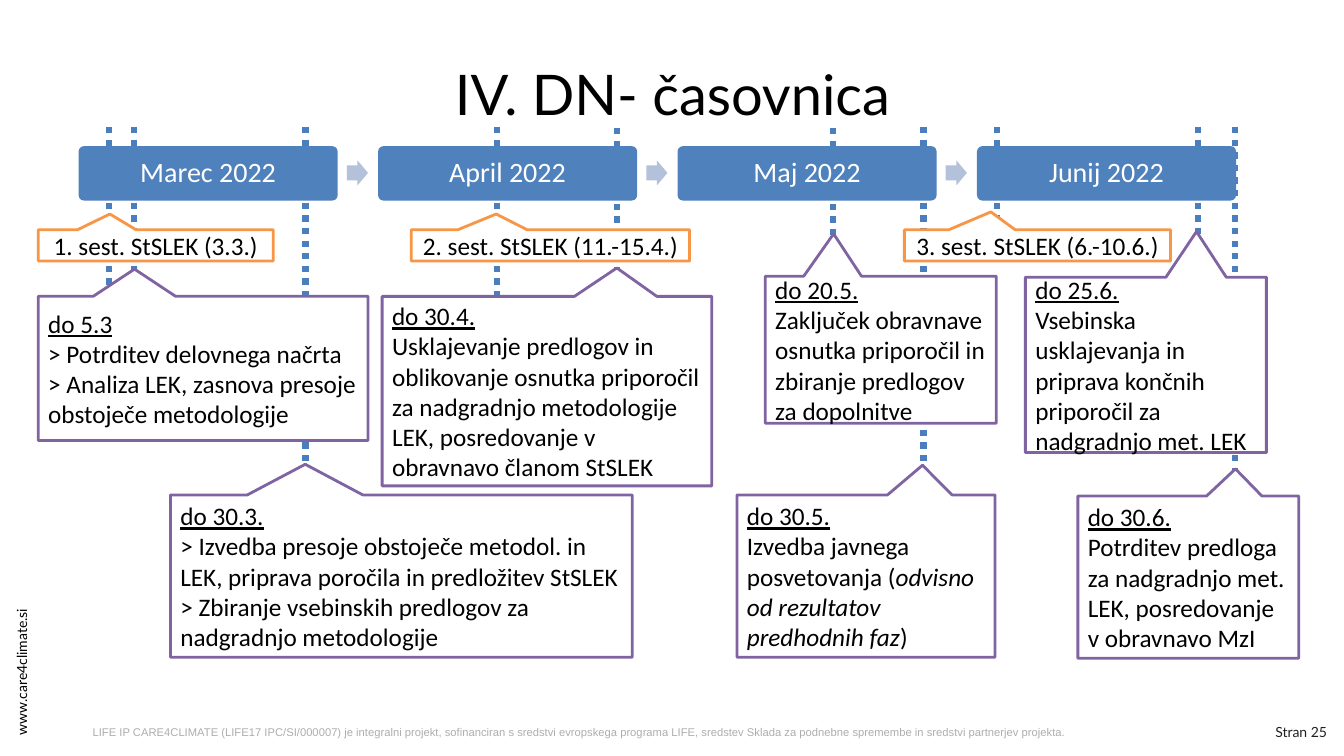
"""Builds the IV. DN timeline slide with months, meetings and deadlines."""
from lxml import etree
from pptx import Presentation
from pptx.dml.color import RGBColor
from pptx.enum import dml, shapes, text
from pptx.oxml import ns
from pptx.util import Inches, Pt

BLACK = RGBColor(0x00, 0x00, 0x00)
WHITE = RGBColor(0xFF, 0xFF, 0xFF)
INK = RGBColor(0x23, 0x1F, 0x20)
GRAY = RGBColor(0xAF, 0xAD, 0xAD)
BLUE = RGBColor(0x4F, 0x81, 0xBD)
PALE_BLUE = RGBColor(0xB3, 0xC1, 0xDB)
DOT_BLUE = RGBColor(0x4B, 0x7E, 0xBC)
PURPLE = RGBColor(0x80, 0x64, 0xA2)
ORANGE = RGBColor(0xF7, 0x96, 0x46)

TITLE = "IV. DN- časovnica"
WEBSITE = "www.care4climate.si"
PAGE = "Stran 25"
FUNDING = (
    "LIFE IP CARE4CLIMATE (LIFE17 IPC/SI/000007) je integralni projekt, "
    "sofinanciran s sredstvi evropskega programa LIFE, sredstev Sklada za "
    "podnebne spremembe in sredstvi partnerjev projekta."
)
MONTHS = ["Marec 2022", "April 2022", "Maj 2022", "Junij 2022"]

# Each marker: x, top, bottom
MARKERS = [
    (12.25, 1.26, 4.88), (11.88, 1.26, 2.5), (9.89, 1.26, 2.5),
    (9.16, 1.26, 4.67), (8.26, 1.27, 3.01), (6.12, 1.27, 3.01),
    (4.93, 1.26, 3.0), (3.03, 1.26, 4.72), (1.33, 1.26, 3.07),
    (1.08, 1.26, 3.07),
]
MEETINGS = [
    ((0.38, 2.28, 2.33, 0.31), (-0.195, -1.006), "1. sest. StSLEK (3.3.)"),
    ((4.08, 2.28, 2.76, 0.31), (-0.195, -1.006), "2. sest. StSLEK (11.-15.4.)"),
    ((8.97, 2.28, 2.64, 0.31), (-0.175, -1.074), "3. sest. StSLEK (6.-10.6.)"),
]
DEADLINES = [
    ((0.38, 2.94, 3.27, 1.43), (-0.208, -0.689), "do 5.3",
     ["> Potrditev delovnega načrta",
      "> Analiza LEK, zasnova presoje obstoječe metodologije"]),
    ((1.69, 4.91, 4.58, 1.61), (-0.208, -0.689), "do 30.3.",
     ["> Izvedba presoje obstoječe metodol. in LEK, priprava poročila in "
      "predložitev StSLEK",
      "> Zbiranje vsebinskih predlogov za nadgradnjo metodologije"]),
    ((3.79, 2.94, 3.27, 1.88), (0.212, -0.65), "do 30.4.",
     ["Usklajevanje predlogov in oblikovanje osnutka priporočil za nadgradnjo "
      "metodologije LEK, posredovanje v obravnavo članom StSLEK"]),
    ((7.59, 2.74, 2.29, 1.46), (-0.204, -0.788), "do 20.5.",
     ["Zaključek obravnave osnutka priporočil in zbiranje predlogov za "
      "dopolnitve"]),
    ((7.31, 4.91, 2.56, 1.61), (0.219, -0.683), "do 30.5.",
     ["Izvedba javnega posvetovanja (*odvisno od rezultatov predhodnih faz*)"]),
    ((10.17, 2.75, 2.39, 1.74), (0.21, -0.76), "do 25.6.",
     ["Vsebinska usklajevanja in priprava končnih priporočil za nadgradnjo "
      "met. LEK"]),
    ((10.69, 4.92, 2.19, 1.61), (0.214, -0.667), "do 30.6.",
     ["Potrditev predloga za nadgradnjo met. LEK, posredovanje v obravnavo "
      "MzI"]),
]
MONTH_LEFT, MONTH_TOP, MONTH_WIDTH, MONTH_HEIGHT, MONTH_STEP = 0.78, 1.45, 2.57, 0.54, 2.97
ARROW_GAP, ARROW_TOP, ARROW_WIDTH, ARROW_HEIGHT = 0.09, 1.59, 0.21, 0.25

LEFT, CENTER, RIGHT = text.PP_ALIGN.LEFT, text.PP_ALIGN.CENTER, text.PP_ALIGN.RIGHT
MIDDLE, TOP = text.MSO_ANCHOR.MIDDLE, text.MSO_ANCHOR.TOP


def write(paragraph, words, size, font, color, align=LEFT):
    """Fill a paragraph; stars enclose italic words."""
    for index, part in enumerate(words.split("*")):
        run = paragraph.add_run()
        run.text = part
        if index % 2:
            run.font.italic = True
    paragraph.alignment = align
    paragraph.font.size = Pt(size)
    paragraph.font.name = font
    paragraph.font.color.rgb = color


def add_label(slide, box, words, size, font, color, align=LEFT, anchor=MIDDLE):
    """Add a text box with one paragraph."""
    label = slide.shapes.add_textbox(*map(Inches, box))
    label.text_frame.word_wrap = True
    label.text_frame.vertical_anchor = anchor
    write(label.text_frame.paragraphs[0], words, size, font, color, align)
    return label


def add_block(slide, kind, box, adjustments, fill, line=None):
    """Add a filled preset shape, outlined when a line colour is given."""
    shape = slide.shapes.add_shape(kind, *map(Inches, box))
    shape.shadow.inherit = False
    for index, value in enumerate(adjustments):
        shape.adjustments[index] = value
    shape.fill.solid()
    shape.fill.fore_color.rgb = fill
    if line is None:
        shape.line.fill.background()
    else:
        shape.line.color.rgb = line
        shape.line.width = Pt(2)
    shape.text_frame.word_wrap = True
    shape.text_frame.vertical_anchor = MIDDLE
    return shape


def add_marker(slide, x, top, bottom):
    """Add a dotted vertical date line."""
    marker = slide.shapes.add_connector(
        shapes.MSO_CONNECTOR.STRAIGHT, *map(Inches, (x, top, x, bottom)))
    marker.line.color.rgb = DOT_BLUE
    marker.line.width = Pt(4.5)
    marker.line.dash_style = dml.MSO_LINE.ROUND_DOT
    etree.SubElement(marker._element.spPr, ns.qn("a:effectLst"))


def add_months(slide):
    """Add the row of months with arrows between them."""
    for index, month in enumerate(MONTHS):
        left = MONTH_LEFT + index * MONTH_STEP
        bar = add_block(slide, shapes.MSO_SHAPE.ROUNDED_RECTANGLE,
                        (left, MONTH_TOP, MONTH_WIDTH, MONTH_HEIGHT), (0.1,), BLUE)
        paragraph = bar.text_frame.paragraphs[0]
        write(paragraph, month, 20, "Calibri", WHITE, CENTER)
        paragraph.line_spacing = 0.9
        if index < len(MONTHS) - 1:
            arrow_left = left + MONTH_WIDTH + ARROW_GAP
            add_block(slide, shapes.MSO_SHAPE.RIGHT_ARROW,
                      (arrow_left, ARROW_TOP, ARROW_WIDTH, ARROW_HEIGHT),
                      (0.6, 0.5), PALE_BLUE)


def main():
    """Build and save the slide."""
    presentation = Presentation()
    presentation.slide_width = Inches(13.33)
    presentation.slide_height = Inches(7.5)
    slide = presentation.slides.add_slide(presentation.slide_layouts[6])

    website = add_label(slide, (-0.7, 6.34, 1.83, 0.27), WEBSITE, 10, "Lato", BLACK)
    website.rotation = 270
    add_label(slide, (12.16, 7.13, 1.1, 0.27), PAGE, 10, "Lato", INK, RIGHT)
    add_label(slide, (0.82, 7.15, 11.56, 0.24), FUNDING, 8, "Arial", GRAY, anchor=TOP)
    for marker in MARKERS:
        add_marker(slide, *marker)
    add_label(slide, (0.67, 0.3, 12, 1.25), TITLE, 40, "Lato", BLACK, CENTER)
    add_months(slide)

    callout_kind = shapes.MSO_SHAPE.RECTANGULAR_CALLOUT
    for box, tip, meeting in MEETINGS:
        callout = add_block(slide, callout_kind, box, tip, WHITE, ORANGE)
        write(callout.text_frame.paragraphs[0], meeting, 18, "Calibri", BLACK, CENTER)
    for box, tip, date, tasks in DEADLINES:
        callout = add_block(slide, callout_kind, box, tip, WHITE, PURPLE)
        heading = callout.text_frame.paragraphs[0]
        write(heading, date, 18, "Calibri", BLACK)
        heading.font.underline = True
        for task in tasks:
            write(callout.text_frame.add_paragraph(), task, 18, "Calibri", BLACK)

    presentation.save("out.pptx")


if __name__ == "__main__":
    main()
